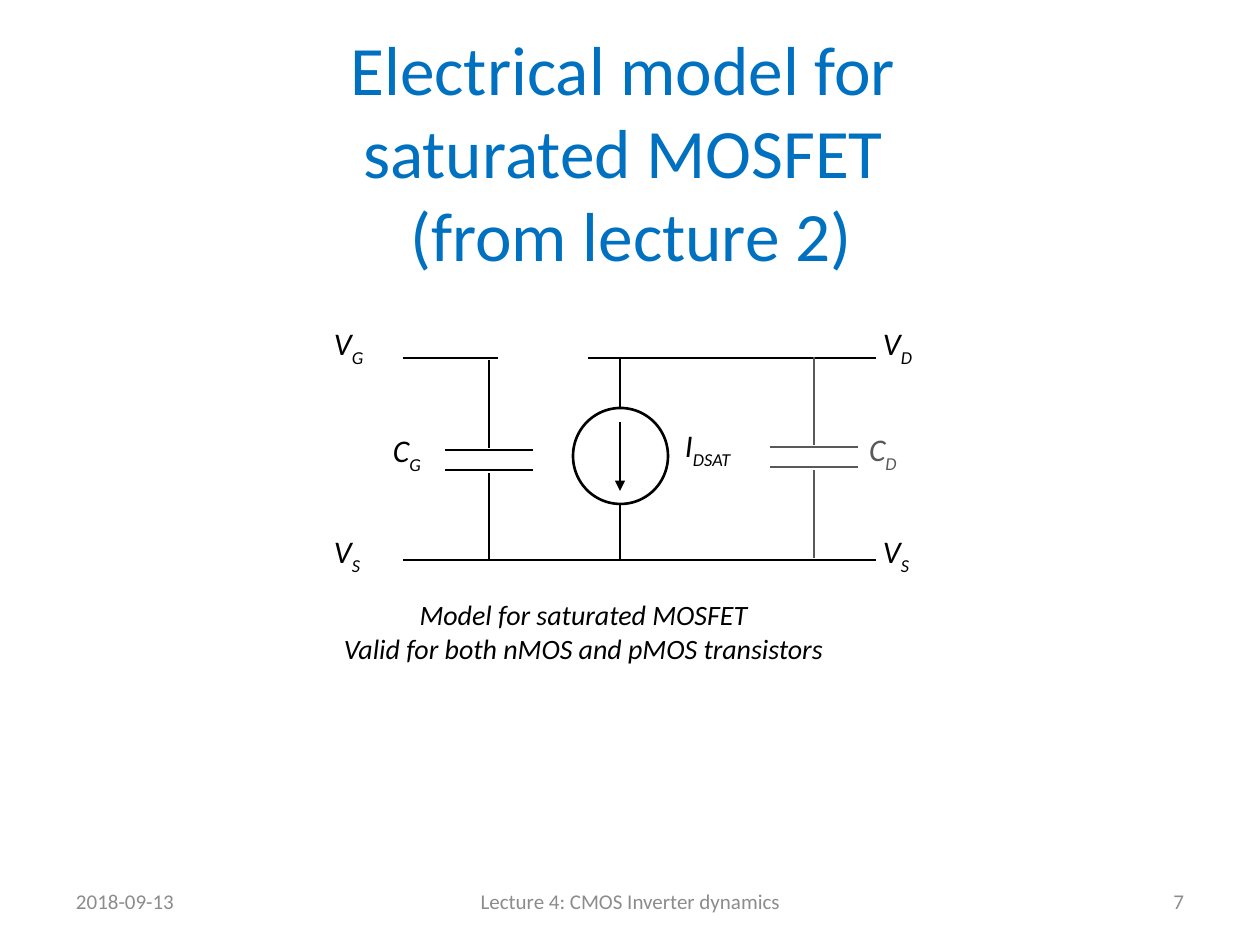
from lxml import etree
from pptx import Presentation
from pptx.dml.color import RGBColor
from pptx.enum.shapes import MSO_CONNECTOR, MSO_SHAPE
from pptx.enum.text import MSO_ANCHOR, MSO_AUTO_SIZE, PP_ALIGN
from pptx.oxml.ns import qn
from pptx.util import Emu, Pt

BLUE = RGBColor(0x00, 0x70, 0xC0)
BLACK = RGBColor(0x00, 0x00, 0x00)
WHITE = RGBColor(0xFF, 0xFF, 0xFF)
DARK = RGBColor(0x59, 0x59, 0x59)
GREY = RGBColor(0x8C, 0x8C, 0x8C)
LEFT, MID, RIGHT = PP_ALIGN.LEFT, PP_ALIGN.CENTER, PP_ALIGN.RIGHT
TOP, CENTER = MSO_ANCHOR.TOP, MSO_ANCHOR.MIDDLE
NO_FIT = MSO_AUTO_SIZE.NONE
STRAIGHT = MSO_CONNECTOR.STRAIGHT
OVAL = MSO_SHAPE.OVAL
SCALE = 914400 / 126


def px(num):
    return Emu(round(num * SCALE))


class Painter:
    face = "Calibri"
    width = Pt(1.5)

    def __init__(self, slide):
        self.slide = slide

    def run(self, para, text, size, color, slant=False, base=None):
        run = para.add_run()
        run.text = text
        font = run.font
        font.name, font.size, font.italic = self.face, Pt(size), slant
        font.color.rgb = color
        if base:
            run._r.get_or_add_rPr().set("baseline", str(base))

    def title(self, lines, x, y, w, h):
        shape = self.slide.shapes.title
        shape.left, shape.top, shape.width, shape.height = map(px, (x, y, w, h))
        frame = shape.text_frame
        frame.auto_size = NO_FIT
        frame.vertical_anchor = CENTER
        para = frame.paragraphs[0]
        para.alignment = MID
        for i, line in enumerate(lines):
            if i:
                para.add_line_break()
            self.run(para, line, 39.6, BLUE)

    def box(self, x, y, w, h, pad=(0, 0), anchor=TOP, wrap=True):
        shape = self.slide.shapes.add_textbox(*map(px, (x, y, w, h)))
        frame = shape.text_frame
        frame.word_wrap = wrap
        frame.vertical_anchor = anchor
        frame.margin_left = frame.margin_right = px(pad[0])
        frame.margin_top = frame.margin_bottom = px(pad[1])
        return frame

    def footer(self, text, x, w, align):
        para = self.box(x, 876, w, 50, (13, 6), CENTER).paragraphs[0]
        para.alignment = align
        self.run(para, text, 12, GREY)

    def symbol(self, name, sub, x, y, w, color=BLACK):
        para = self.box(x, y, w, 38, wrap=False).paragraphs[0]
        para.alignment = LEFT
        self.run(para, name, 18, color, True)
        self.run(para, sub, 18, color, True, -30000)

    def caption(self, lines, x, y, w, h):
        frame = self.box(x, y, w, h, (5, 4))
        for i, line in enumerate(lines):
            para = frame.add_paragraph() if i else frame.paragraphs[0]
            para.alignment = MID
            self.run(para, line, 16, BLACK, True)

    def wire(self, x1, y1, x2, y2, color=BLACK, arrow=False):
        line = self.slide.shapes.add_connector(STRAIGHT, *map(px, (x1, y1, x2, y2)))
        line.line.color.rgb = color
        line.line.width = self.width
        if arrow:
            etree.SubElement(line.line._get_or_add_ln(), qn("a:tailEnd"), type="triangle")
        etree.SubElement(line._element.spPr, qn("a:effectLst"))

    def ring(self, x, y, w, h):
        shape = self.slide.shapes.add_shape(OVAL, *map(px, (x, y, w, h)))
        shape.shadow.inherit = False
        shape.fill.solid()
        shape.fill.fore_color.rgb = WHITE
        shape.line.color.rgb = BLACK
        shape.line.width = self.width

    def cap(self, x, y, color):
        for plate in (y + 90, y + 110):
            self.wire(x - 44, plate, x + 44, plate, color)
        for lead in (y, y + 113):
            self.wire(x, lead, x, lead + 88, color)


def main():
    deck = Presentation()
    deck.slide_width, deck.slide_height = px(1260), px(945)
    pen = Painter(deck.slides.add_slide(deck.slide_layouts[5]))

    pen.title(["Electrical model for ", "saturated MOSFET ", "(from lecture 2)"],
              64, 37, 1134, 228)
    pen.footer("2018-09-13", 63, 294, LEFT)
    pen.footer("Lecture 4: CMOS Inverter dynamics", 431, 399, MID)
    pen.footer("7", 903, 294, RIGHT)

    pen.wire(403, 358, 498, 358)
    pen.wire(588, 358, 876, 358)
    pen.wire(403, 560, 876, 560)
    pen.wire(620, 358, 620, 560)
    pen.ring(573, 408, 95, 96)
    pen.wire(620, 422, 620, 491, arrow=True)
    pen.cap(489, 360, BLACK)
    pen.cap(814, 357, DARK)

    for name, sub, x, y, w, color in (
        ("V", "G", 334, 324, 39, BLACK),
        ("V", "D", 883, 324, 38, BLACK),
        ("V", "S", 334, 532, 35, BLACK),
        ("V", "S", 883, 532, 35, BLACK),
        ("I", "DSAT", 685, 426, 78, BLACK),
        ("C", "G", 393, 431, 30, BLACK),
        ("C", "D", 869, 430, 30, DARK),
    ):
        pen.symbol(name, sub, x, y, w, color)

    pen.caption(["Model for saturated MOSFET", "Valid for both nMOS and pMOS transistors"],
                313, 594, 541, 88)
    deck.save("out.pptx")


if __name__ == "__main__":
    main()
